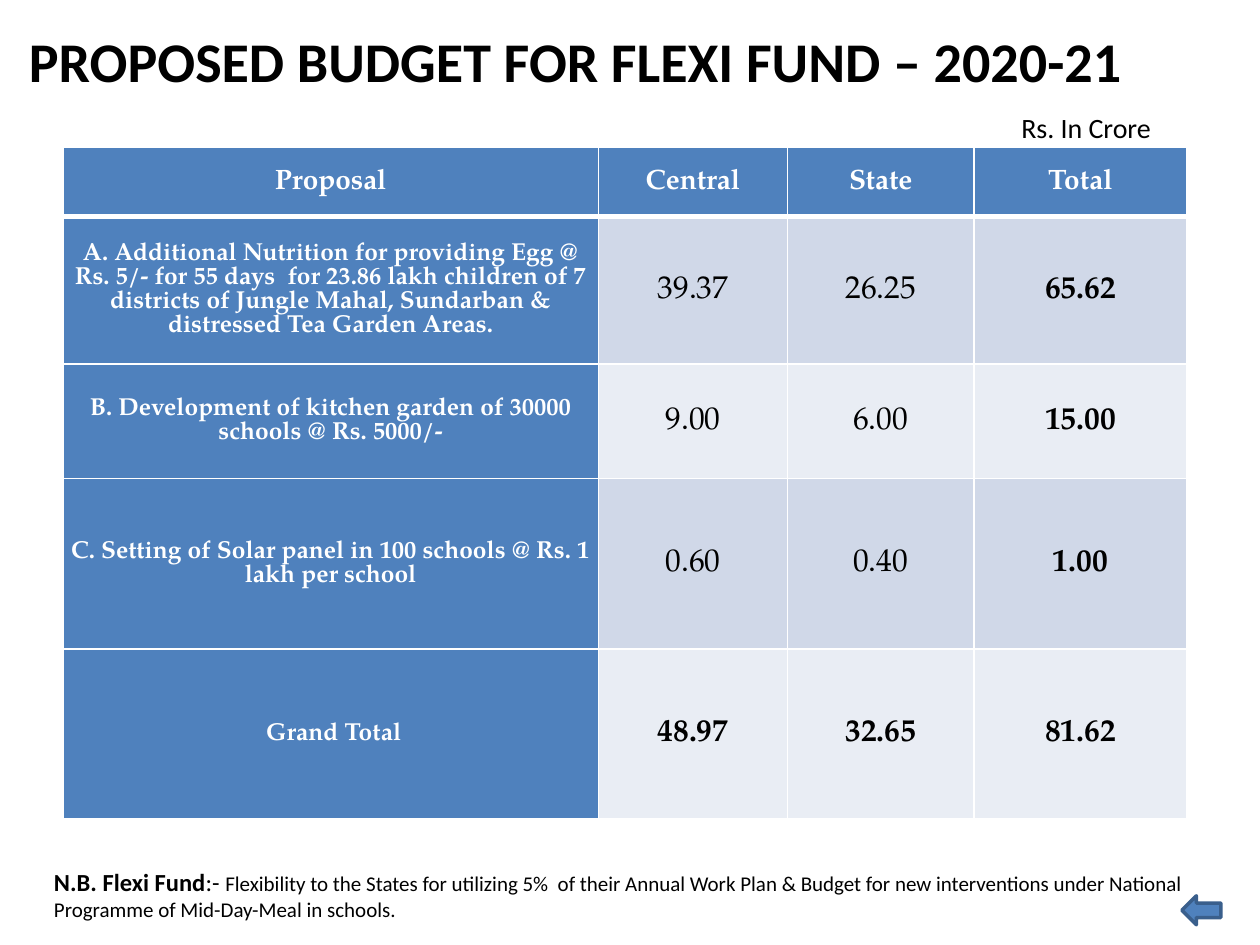
from lxml import etree
from pptx import Presentation
from pptx.dml.color import RGBColor
from pptx.enum.shapes import MSO_SHAPE
from pptx.enum.text import MSO_ANCHOR, PP_ALIGN
from pptx.oxml.ns import qn
from pptx.util import Inches, Pt

CENTER, LEFT = PP_ALIGN.CENTER, PP_ALIGN.LEFT
MIDDLE, TOP = MSO_ANCHOR.MIDDLE, MSO_ANCHOR.TOP
LEFT_ARROW = MSO_SHAPE.LEFT_ARROW
COLUMNS, ROWS = 100, 75

BUDGET = [
    ["Proposal", "Central", "State", "Total"],
    ["A. Additional Nutrition for providing Egg @ Rs. 5/- for 55 days  for 23.86 lakh children "
     "of 7 districts of Jungle Mahal, Sundarban & distressed Tea Garden Areas.",
     "39.37", "26.25", "65.62"],
    ["B. Development of kitchen garden of 30000 schools @ Rs. 5000/-", "9.00", "6.00", "15.00"],
    ["C. Setting of Solar panel in 100 schools @ Rs. 1 lakh per school", "0.60", "0.40", "1.00"],
    [" Grand Total", "48.97", "32.65", "81.62"],
]


def color(value):
    return RGBColor.from_string(value)


def apply_format(target, values):
    for name, value in values.items():
        setattr(target, name, value)


class BudgetSlide:
    blue, outline, white, black = "4F81BD", "3A5F8C", "FFFFFF", "000000"
    bands = ("D0D8E8", "E9EDF4")
    body_font, table_font = "Calibri", "TeX Gyre Pagella"

    def __init__(self, presentation):
        self.slide = presentation.slides.add_slide(presentation.slide_layouts[6])
        self.column = presentation.slide_width / COLUMNS
        self.row = presentation.slide_height / ROWS

    def place(self, left, top, width, height):
        return (round(left * self.column), round(top * self.row),
                round(width * self.column), round(height * self.row))

    def add_words(self, paragraph, text, size, bold, font, ink):
        run = paragraph.add_run()
        run.text = text
        apply_format(run.font, {"size": Pt(size), "bold": bold, "name": font})
        run.font.color.rgb = color(ink)

    def text(self, box, runs, align=LEFT, anchor=TOP):
        frame = self.slide.shapes.add_textbox(*self.place(*box)).text_frame
        apply_format(frame, {"word_wrap": True, "vertical_anchor": anchor})
        paragraph = frame.paragraphs[0]
        paragraph.alignment = align
        for content, size, bold in runs:
            self.add_words(paragraph, content, size, bold, self.body_font, self.black)

    def border(self, cell, side, points):
        line = etree.SubElement(cell._tc.get_or_add_tcPr(), qn(f"a:{side}"), w=str(Pt(points)))
        fill = etree.SubElement(line, qn("a:solidFill"))
        etree.SubElement(fill, qn("a:srgbClr"), val=self.white)

    def cell(self, cell, text, row, column, last_row, last_column):
        header, label = row == 0, column == 0
        dark = header or label
        apply_format(cell, {
            "vertical_anchor": MIDDLE, "margin_left": Inches(0.01), "margin_right": Inches(0.01),
            "margin_top": Inches(0.01), "margin_bottom": 0,
        })
        for side in ("lnL", "lnR", "lnT", "lnB"):
            thick = (row, side) in ((0, "lnB"), (1, "lnT"))
            self.border(cell, side, 3 if thick else 1)
        cell.fill.solid()
        cell.fill.fore_color.rgb = color(self.blue if dark else self.bands[(row - 1) % 2])
        paragraph = cell.text_frame.paragraphs[0]
        paragraph.alignment = CENTER
        size = 16 if header else 14 if label else 18
        bold = dark or row == last_row or column == last_column
        self.add_words(paragraph, text, size, bold, self.table_font,
                       self.white if dark else self.black)

    def table(self, left, top, widths, heights, values):
        box = self.place(left, top, sum(widths), sum(heights))
        table = self.slide.shapes.add_table(len(heights), len(widths), *box).table
        for column, width in zip(table.columns, widths):
            column.width = round(width * self.column)
        for row, height in zip(table.rows, heights):
            row.height = round(height * self.row)
        for row, texts in enumerate(values):
            for column, text in enumerate(texts):
                self.cell(table.cell(row, column), text, row, column,
                          len(heights) - 1, len(widths) - 1)

    def arrow(self, box):
        shape = self.slide.shapes.add_shape(LEFT_ARROW, *self.place(*box))
        shape.shadow.inherit = False
        shape.fill.solid()
        shape.fill.fore_color.rgb = color(self.blue)
        shape.line.color.rgb = color(self.outline)
        shape.line.width = Pt(2)


def main():
    presentation = Presentation()
    apply_format(presentation, {"slide_width": Inches(10), "slide_height": Inches(7.5)})
    page = BudgetSlide(presentation)
    page.text((0, 0, 92.5, 9.1),
              [("PROPOSED BUDGET FOR FLEXI FUND – 2020-21", 32, True), (" ", 36, True)],
              CENTER, MIDDLE)
    page.table(5, 11.7, (42.5, 15, 14.8, 16.9), (5.5, 11.7, 9.1, 13.5, 13.5), BUDGET)
    page.text((78.3, 8.3, 15.8, 3.7), [("Rs. In Crore", 16, False)], CENTER)
    page.text((3.3, 68.3, 94.2, 5.4), [
        ("N.B. Flexi Fund", 14, True),
        (":- ", 14, False),
        ("Flexibility to the States for utilizing 5%  of their Annual Work Plan & Budget for new "
         "interventions under National Programme of Mid-Day-Meal in schools.", 12, False),
    ])
    page.arrow((93.8, 71.1, 3.1, 2.3))
    presentation.save("out.pptx")


if __name__ == "__main__":
    main()
